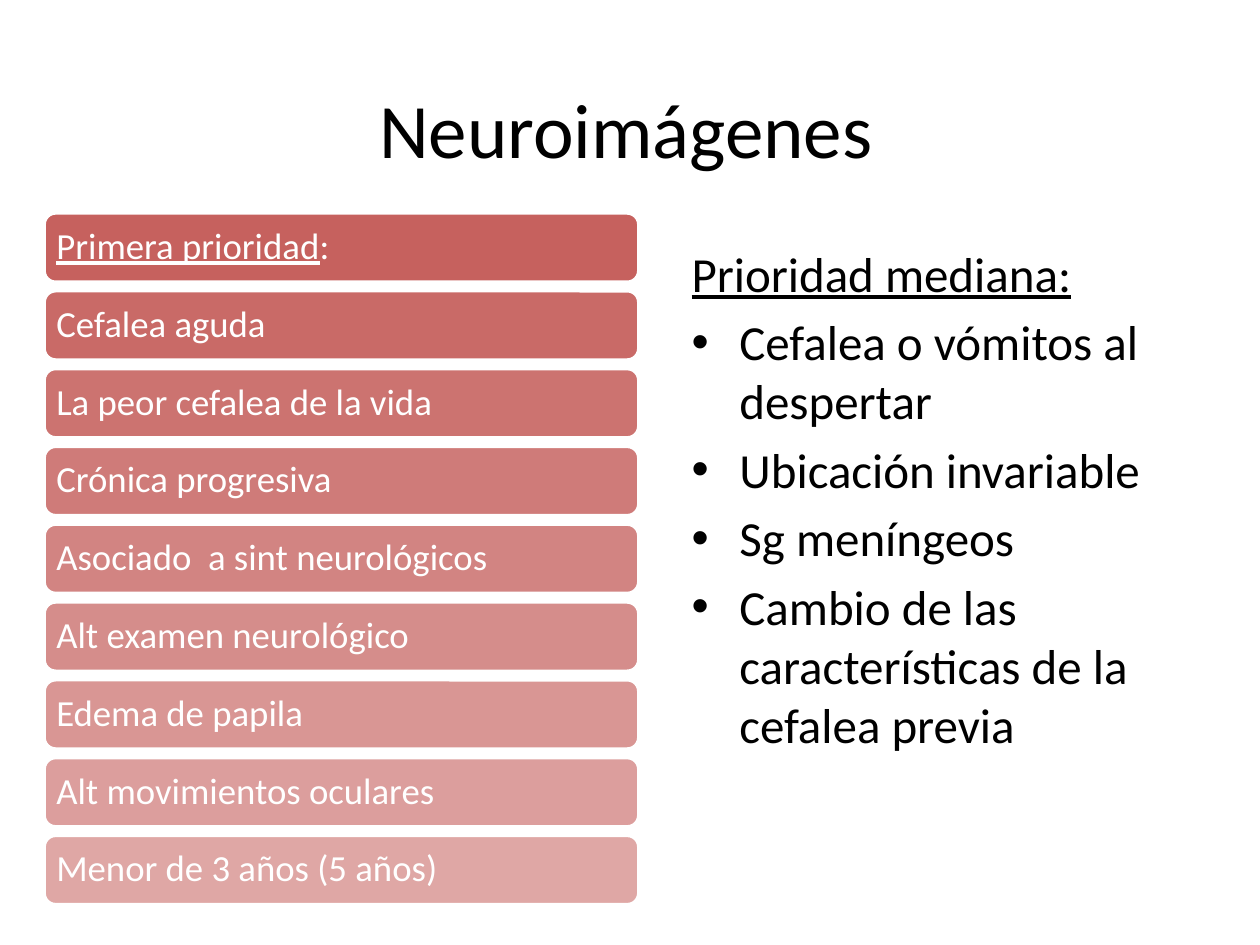
import pptx
import pptx.dml.color
import pptx.enum.shapes
import pptx.enum.text
import pptx.oxml.ns
import pptx.util
from lxml import etree
from pptx.util import Inches

RED = pptx.dml.color.RGBColor(0xC0, 0x50, 0x4D)
WHITE = pptx.dml.color.RGBColor(0xFF, 0xFF, 0xFF)
BLACK = pptx.dml.color.RGBColor(0x00, 0x00, 0x00)

PRIORITY_HEADING = "Primera prioridad"
FIRST_PRIORITY = [
    PRIORITY_HEADING + ":",
    "Cefalea aguda",
    "La peor cefalea de la vida",
    "Crónica progresiva",
    "Asociado  a sint neurológicos",
    "Alt examen neurológico",
    "Edema de papila",
    "Alt movimientos oculares",
    "Menor de 3 años (5 años)",
]
MEDIUM_HEADING = "Prioridad mediana:"
MEDIUM_PRIORITY = [
    "Cefalea o vómitos al despertar",
    "Ubicación invariable",
    "Sg meníngeos",
    "Cambio de las características de la cefalea previa",
]


class SlideBuilder:
    """Holds the text style and the current slide, and draws its elements."""

    font_name = "Calibri"

    def __init__(self, presentation):
        self.slide = presentation.slides.add_slide(presentation.slide_layouts[5])

    def format_run(self, run, size, color, underline=False):
        run.font.name = self.font_name
        run.font.size = pptx.util.Pt(size)
        run.font.color.rgb = color
        run.font.underline = underline

    def title(self, text, left, top, width, height):
        title = self.slide.shapes.title
        title.left, title.top = Inches(left), Inches(top)
        title.width, title.height = Inches(width), Inches(height)
        title.text_frame.text = text
        title.text_frame.vertical_anchor = pptx.enum.text.MSO_ANCHOR.MIDDLE
        paragraph = title.text_frame.paragraphs[0]
        paragraph.alignment = pptx.enum.text.PP_ALIGN.CENTER
        self.format_run(paragraph.runs[0], 44, BLACK)

    def bar(self, text, left, top, width, height, opacity):
        shape = self.slide.shapes.add_shape(
            pptx.enum.shapes.MSO_SHAPE.ROUNDED_RECTANGLE,
            Inches(left), Inches(top), Inches(width), Inches(height))
        shape.shadow.inherit = False
        shape.fill.solid()
        shape.fill.fore_color.rgb = RED
        color = shape.fill._xPr.find(".//" + pptx.oxml.ns.qn("a:srgbClr"))
        etree.SubElement(color, pptx.oxml.ns.qn("a:alpha"), val=str(opacity * 1000))
        shape.line.color.rgb = WHITE
        shape.line.width = pptx.util.Pt(2)
        frame = shape.text_frame
        frame.margin_left = frame.margin_right = Inches(0.07)
        frame.vertical_anchor = pptx.enum.text.MSO_ANCHOR.MIDDLE
        frame.text = text
        paragraph = frame.paragraphs[0]
        paragraph.alignment = pptx.enum.text.PP_ALIGN.LEFT
        paragraph.line_spacing = 0.9
        self.format_run(paragraph.runs[0], 21, WHITE)
        return shape

    def underline_start(self, shape, heading):
        paragraph = shape.text_frame.paragraphs[0]
        first = paragraph.runs[0]
        rest = paragraph.add_run()
        rest.text = first.text[len(heading):]
        first.text = heading
        first.font.underline = True
        self.format_run(rest, 21, WHITE)

    def bullet_list(self, heading, items, left, top, width, height):
        box = self.slide.shapes.add_textbox(
            Inches(left), Inches(top), Inches(width), Inches(height))
        frame = box.text_frame
        frame.word_wrap = True
        frame.text = "\n".join([heading, *items])
        for index, paragraph in enumerate(frame.paragraphs):
            paragraph.space_before = pptx.util.Pt(5.6)
            self.format_run(paragraph.runs[0], 28, BLACK, underline=index == 0)
            properties = paragraph._p.get_or_add_pPr()
            properties.set("marL", str(Inches(0.38)))
            properties.set("indent", str(Inches(-0.38)))
            if index:
                etree.SubElement(properties, pptx.oxml.ns.qn("a:buFont"), typeface="Arial")
                etree.SubElement(properties, pptx.oxml.ns.qn("a:buChar"), char="•")
            else:
                etree.SubElement(properties, pptx.oxml.ns.qn("a:buNone"))


def main():
    presentation = pptx.Presentation()
    presentation.slide_width, presentation.slide_height = Inches(10), Inches(7.5)
    builder = SlideBuilder(presentation)
    builder.title("Neuroimágenes", 0.47, 0.39, 9, 1.25)
    bars = [
        builder.bar(text, 0.35, 1.69 + index * 4.94 / 8, 4.72, 0.55, 90 - 5 * index)
        for index, text in enumerate(FIRST_PRIORITY)
    ]
    builder.underline_start(bars[0], PRIORITY_HEADING)
    builder.bullet_list(MEDIUM_HEADING, MEDIUM_PRIORITY, 5.39, 1.88, 4.42, 4.95)
    presentation.save("out.pptx")


if __name__ == "__main__":
    main()
